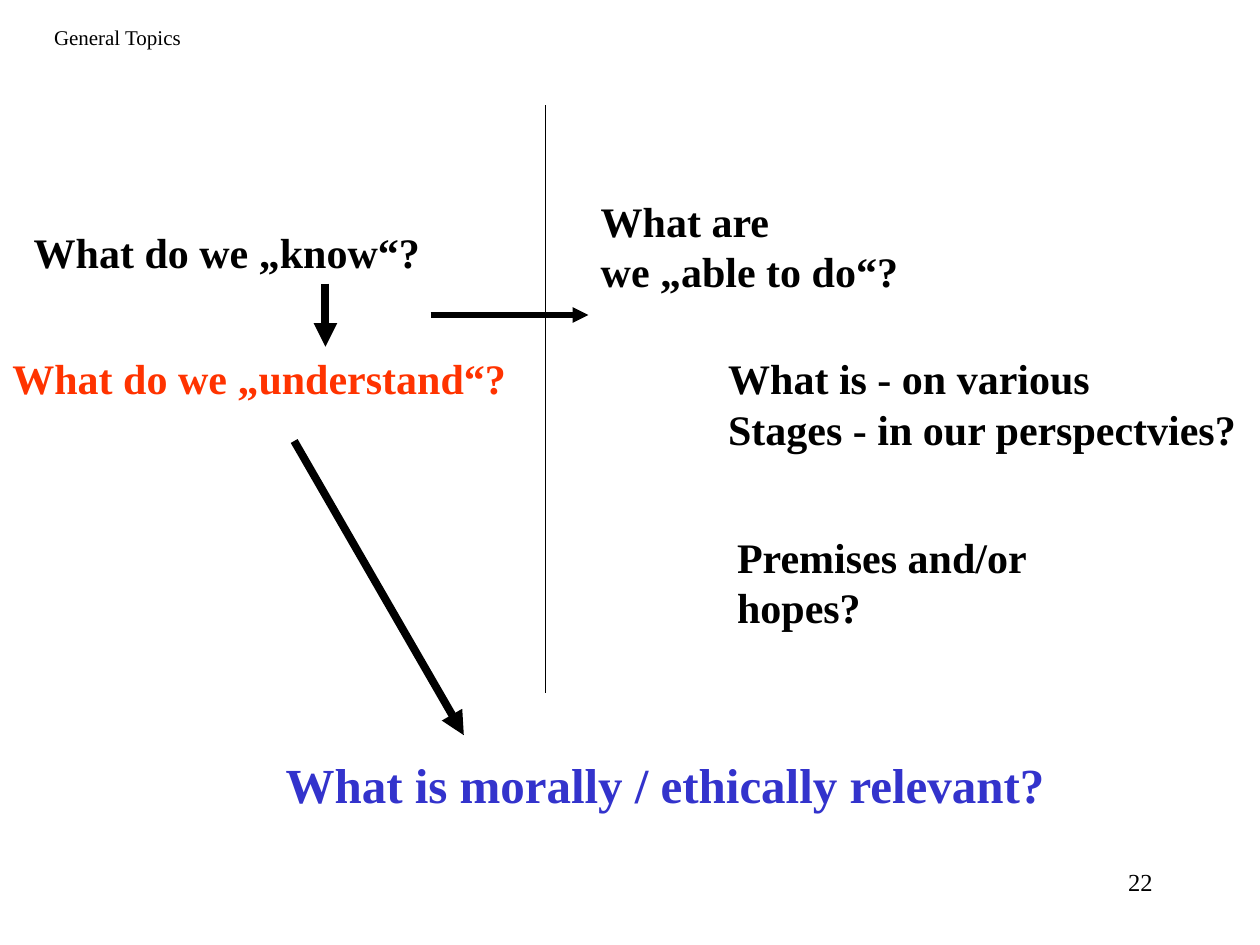
"""Build the General Topics slide of questions linked by arrows."""
from lxml.etree import SubElement
from pptx import Presentation
from pptx.dml.color import RGBColor
from pptx.enum.shapes import MSO_CONNECTOR as CONN
from pptx.enum.text import MSO_ANCHOR as ANCHOR, MSO_AUTO_SIZE as FIT, PP_ALIGN as ALIGN
from pptx.oxml.ns import qn
from pptx.util import Cm, Pt

FONT = "Times New Roman"
BLACK = RGBColor(0x00, 0x00, 0x00)
RED = RGBColor(0xFF, 0x33, 0x00)
BLUE = RGBColor(0x33, 0x33, 0xCC)

LABELS = [
    ("22", (18.21, 17.35, 5.28, 1.27), dict(size=14, align=ALIGN.RIGHT)),
    ("General Topics", (0.84, 0.43, 6.99, 0.64), dict(size=12, anchor=ANCHOR.MIDDLE)),
]
QUESTIONS = [
    ("What do we „know“?", (0.43, 4.45, 8.31, 1.27), dict(wrap=False)),
    ("What do we „understand“?", (0, 6.99, 10.8, 1.27), dict(color=RED)),
    ("What are\nwe „able to do“?", (11.86, 3.81, 6.5, 2.29), dict(wrap=False)),
    ("What is morally / ethically relevant?", (5.51, 15.09, 15.85, 1.45),
     dict(size=28, color=BLUE, wrap=False)),
    ("What is - on various\nStages - in our perspectvies?", (14.43, 6.99, 10.97, 2.29),
     dict(wrap=False)),
    ("Premises and/or\vhopes?", (14.61, 10.59, 8.86, 2.29), {}),
]
LINES = [
    ((11.0, 2.12), (11.0, 13.97), 0.75, False),
    ((5.93, 8.89), (9.35, 14.82), 4.5, True),
    ((8.68, 6.35), (11.86, 6.35), 3, True),
    ((6.56, 5.72), (6.56, 6.99), 4.5, True),
]


def add_text(s, text, box, size=24, color=BLACK, bold=False, wrap=True,
             align=ALIGN.LEFT, anchor=ANCHOR.TOP, fit=FIT.NONE):
    tf = s.shapes.add_textbox(*map(Cm, box)).text_frame
    tf.word_wrap, tf.auto_size, tf.vertical_anchor = wrap, fit, anchor
    for i, line in enumerate(text.split("\n")):
        p = tf.add_paragraph() if i else tf.paragraphs[0]
        p.text, p.alignment = line, align
        for r in p.runs:
            r.font.name, r.font.size, r.font.bold = FONT, Pt(size), bold
            r.font.color.rgb = color


def add_line(s, start, end, width, arrow):
    line = s.shapes.add_connector(CONN.STRAIGHT, *map(Cm, start + end))
    line.line.color.rgb = BLACK
    line.line.width = Pt(width)
    if arrow:
        SubElement(line.line._get_or_add_ln(), qn("a:tailEnd"), type="triangle")
    SubElement(line._element.spPr, qn("a:effectLst"))


def main():
    prs = Presentation()
    prs.slide_width, prs.slide_height = Cm(25.4), Cm(19.05)
    s = prs.slides.add_slide(prs.slide_layouts[6])
    for text, box, style in LABELS:
        add_text(s, text, box, **style)
    for text, box, style in QUESTIONS:
        add_text(s, text, box, bold=True, fit=FIT.SHAPE_TO_FIT_TEXT, **style)
    for line in LINES:
        add_line(s, *line)
    prs.save("out.pptx")


if __name__ == "__main__":
    main()
